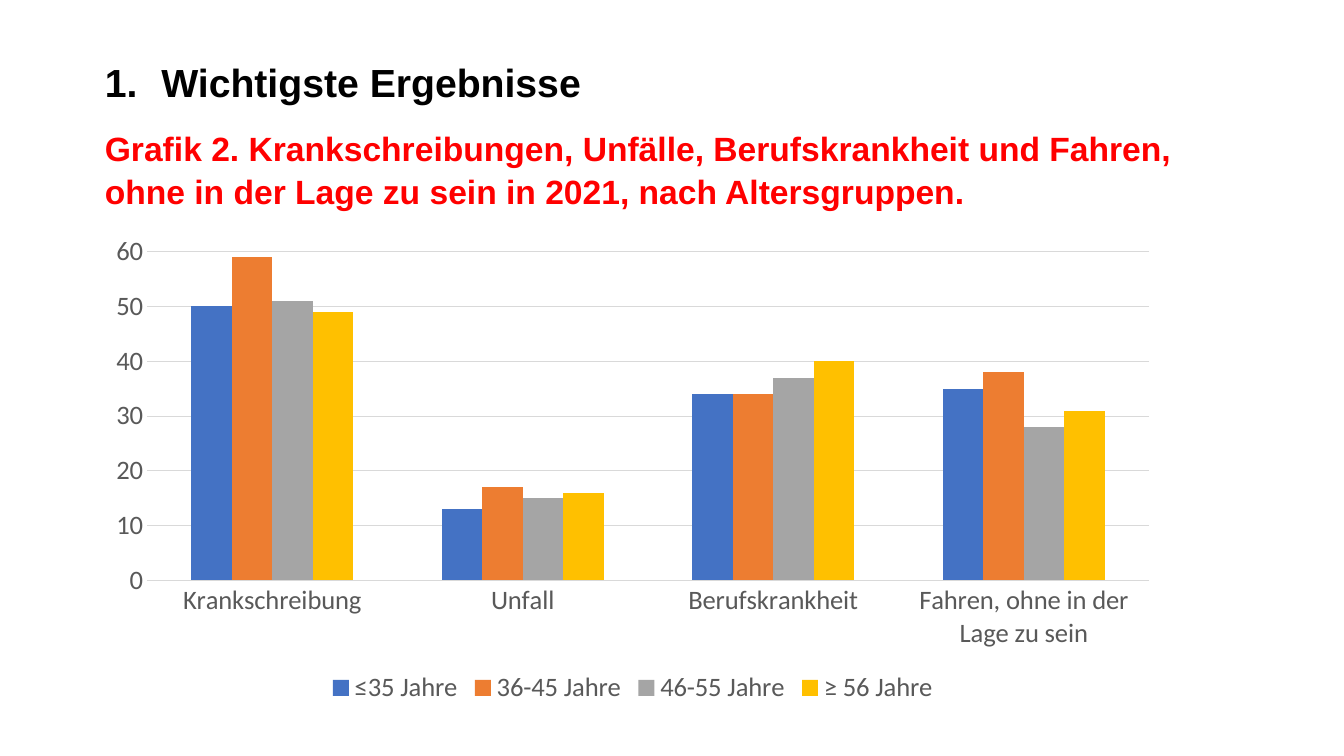
from pptx import Presentation
from pptx.chart.data import CategoryChartData
from pptx.dml.color import RGBColor
from pptx.enum.chart import XL_CHART_TYPE, XL_LEGEND_POSITION, XL_TICK_MARK
from pptx.enum.text import MSO_ANCHOR, MSO_AUTO_SIZE, PP_ALIGN
from pptx.oxml.ns import qn
from pptx.util import Inches, Pt
from lxml import etree

CLUSTERED = XL_CHART_TYPE.COLUMN_CLUSTERED
BOTTOM = XL_LEGEND_POSITION.BOTTOM
NO_TICK = XL_TICK_MARK.NONE
LEFT_MARGIN = Inches(0.94)


def color(hex_text):
    return RGBColor.from_string(hex_text)


def write(para, text, size, fill, numbered=False, after=0):
    para.alignment = PP_ALIGN.LEFT
    para.line_spacing = 1.07
    para.space_before = Pt(0)
    para.space_after = Pt(after)
    if numbered:
        properties = para._p.get_or_add_pPr()
        properties.set("marL", str(Inches(0.56)))
        properties.set("indent", str(-Inches(0.56)))
        bullet = etree.SubElement(properties, qn("a:buAutoNum"))
        bullet.set("type", "arabicPeriod")
    span = para.add_run()
    span.text = text
    span.font.name = "Arial"
    span.font.size = Pt(size)
    span.font.bold = True
    span.font.color.rgb = color(fill)


deck = Presentation()
deck.slide_width = Inches(13.33)
deck.slide_height = Inches(7.5)
page = deck.slides.add_slide(deck.slide_layouts[5])

title = page.shapes.title
title.left, title.top = LEFT_MARGIN, Inches(0.5)
title.width, title.height = Inches(11.28), Inches(1.58)
frame = title.text_frame
frame.word_wrap = True
frame.auto_size = MSO_AUTO_SIZE.NONE
frame.vertical_anchor = MSO_ANCHOR.TOP
write(frame.paragraphs[0], "Wichtigste Ergebnisse", 28, "000000", numbered=True, after=14)
write(
    frame.add_paragraph(),
    "Grafik 2. Krankschreibungen, Unfälle, Berufskrankheit und Fahren, "
    "ohne in der Lage zu sein in 2021, nach Altersgruppen.",
    24,
    "FF0000",
)

age_groups = [
    ("≤35 Jahre", (50, 13, 34, 35), "4472C4"),
    ("36-45 Jahre", (59, 17, 34, 38), "ED7D31"),
    ("46-55 Jahre", (51, 15, 37, 28), "A5A5A5"),
    ("≥ 56 Jahre", (49, 16, 40, 31), "FFC000"),
]
data = CategoryChartData()
data.categories = ["Krankschreibung", "Unfall", "Berufskrankheit", "Fahren, ohne in der Lage zu sein"]
for name, values, fill in age_groups:
    data.add_series(name, values)

chart = page.shapes.add_chart(
    CLUSTERED, LEFT_MARGIN, Inches(2.24), Inches(10.67), Inches(4.8), data
).chart
chart.has_title = False
chart.font.name = "Calibri"
chart.font.size = Pt(19)
chart.font.color.rgb = color("595959")
chart.has_legend = True
chart.legend.position = BOTTOM
chart.legend.include_in_layout = False

plot = chart.plots[0]
plot.gap_width = 219
plot.overlap = 0
plot.vary_by_categories = False
for series, (name, values, fill) in zip(plot.series, age_groups):
    series.format.fill.solid()
    series.format.fill.fore_color.rgb = color(fill)

value_axis, category_axis = chart.value_axis, chart.category_axis
value_axis.minimum_scale = 0
value_axis.maximum_scale = 60
value_axis.major_unit = 10
value_axis.has_major_gridlines = True
value_axis.format.line.fill.background()
for axis in (value_axis, category_axis):
    axis.major_tick_mark = NO_TICK
    axis.minor_tick_mark = NO_TICK
for rule in (value_axis.major_gridlines, category_axis):
    rule.format.line.color.rgb = color("D9D9D9")
    rule.format.line.width = Pt(0.75)

deck.save("out.pptx")
